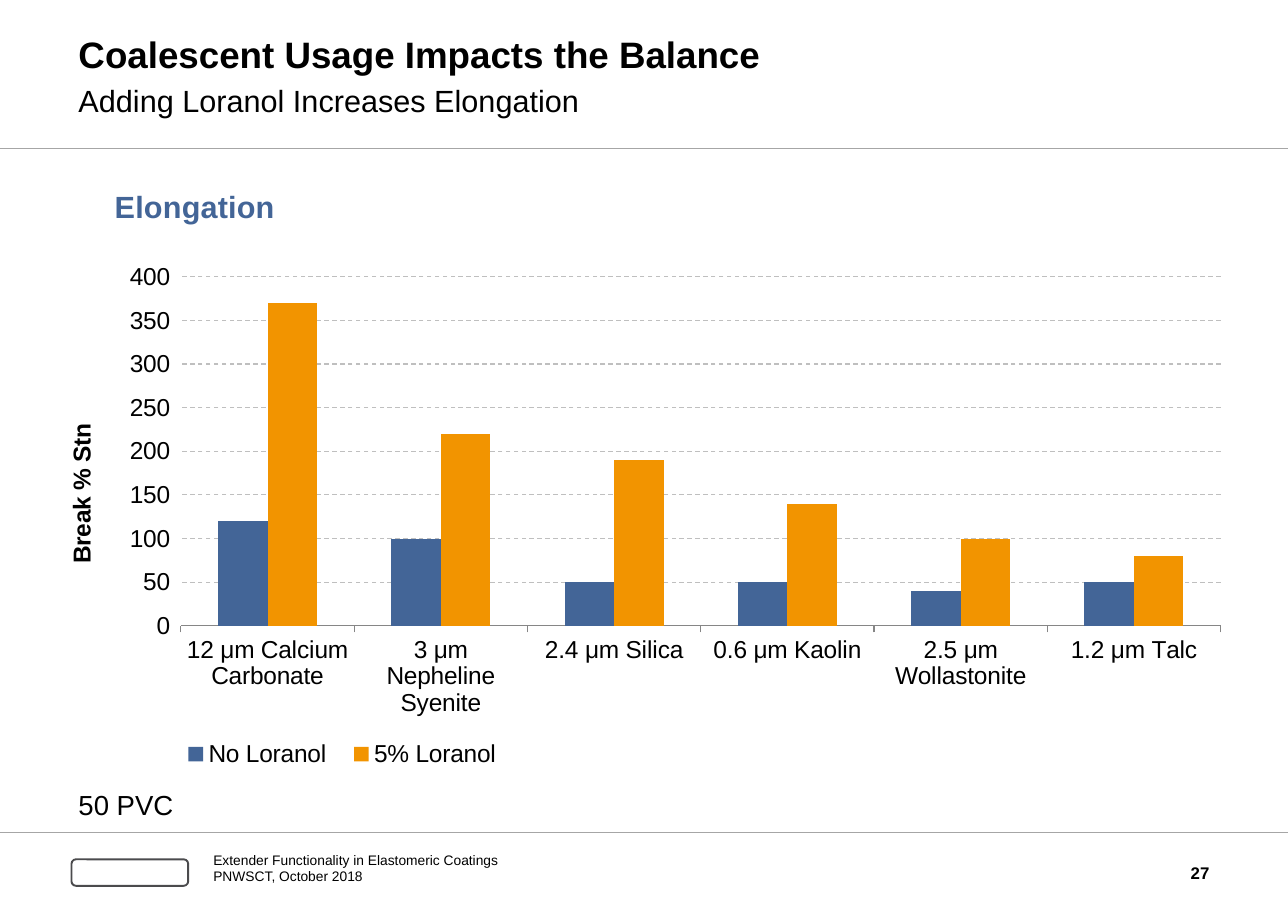
from dataclasses import dataclass

from lxml.etree import SubElement
from pptx import Presentation
from pptx.chart.chart import Chart
from pptx.chart.data import CategoryChartData
from pptx.dml.color import RGBColor
from pptx.enum.chart import XL_CHART_TYPE, XL_LEGEND_POSITION, XL_TICK_MARK
from pptx.enum.dml import MSO_LINE
from pptx.enum.shapes import MSO_CONNECTOR, MSO_SHAPE
from pptx.enum.text import MSO_ANCHOR, MSO_AUTO_SIZE, PP_ALIGN
from pptx.oxml import parse_xml
from pptx.oxml.ns import nsdecls, qn
from pptx.slide import Slide
from pptx.text.text import Font, TextFrame
from pptx.util import Cm, Pt


@dataclass(frozen=True)
class Theme:
    font: str = "Arial"
    text: str = "000000"
    blue: str = "436597"
    orange: str = "F29400"
    white: str = "FFFFFF"
    logo: str = "4B4B4D"
    rule: str = "A6A6A6"
    grid: str = "BFBFBF"
    axis: str = "868686"
    title: int = 24
    subtitle: int = 20
    note: int = 18
    chart: int = 16
    number: int = 11
    footer: int = 9


@dataclass(frozen=True)
class Box:
    left: float
    top: float
    width: float
    height: float

    def lengths(self) -> tuple[Cm, Cm, Cm, Cm]:
        return Cm(self.left), Cm(self.top), Cm(self.width), Cm(self.height)


@dataclass(frozen=True)
class Label:
    box: Box
    lines: tuple[str, ...]
    size: int
    bold: bool = False
    align: PP_ALIGN = PP_ALIGN.LEFT
    spacing: float | None = None


@dataclass(frozen=True)
class Rule:
    top: float
    width: float


@dataclass(frozen=True)
class Series:
    name: str
    values: tuple[int, ...]
    color: str


THEME = Theme()
PAGE_WIDTH, PAGE_HEIGHT = 29.7, 21.0
TITLE_BOX = Box(1.81, 0.53, 26.09, 2.21)
CHART_BOX = Box(1.14, 4.2, 27.56, 13.64)
LOGO_BOX = Box(1.65, 19.81, 2.69, 0.61)
RULES = (Rule(3.43, 0.75), Rule(19.19, 0.5))
LABELS = (
    Label(Box(4.92, 19.63, 12.47, 0.79),
          ("Extender Functionality in Elastomeric Coatings", "PNWSCT, October 2018"),
          THEME.footer, spacing=10.4),
    Label(Box(25.63, 19.53, 2.26, 1.19), ("27",), THEME.number, True, PP_ALIGN.RIGHT),
    Label(Box(1.81, 18.15, 26.21, 0.81), ("50 PVC",), THEME.note),
)
FILLERS = ("12 μm Calcium Carbonate", "3 μm Nepheline Syenite", "2.4 μm Silica",
           "0.6 μm Kaolin", "2.5 μm Wollastonite", "1.2 μm Talc")
SERIES = (
    Series("No Loranol", (120, 100, 50, 50, 40, 50), THEME.blue),
    Series("5% Loranol", (370, 220, 190, 140, 100, 80), THEME.orange),
)


def rgb(color: str) -> RGBColor:
    return RGBColor.from_string(color)


def set_font(font: Font, size: int, bold: bool = False, color: str = THEME.text) -> None:
    font.name, font.size, font.bold = THEME.font, Pt(size), bold
    font.color.rgb = rgb(color)


def add_text(p, text: str, *, size: int, bold: bool = False, color: str = THEME.text) -> None:
    r = p.add_run()
    r.text = text
    set_font(r.font, size, bold, color)


def prepare_frame(tf: TextFrame, anchor: MSO_ANCHOR) -> None:
    tf.margin_left = tf.margin_top = tf.margin_right = tf.margin_bottom = 0
    tf.word_wrap = True
    tf.auto_size = MSO_AUTO_SIZE.NONE
    tf.vertical_anchor = anchor


def add_title(s: Slide) -> None:
    sp = s.shapes.title
    sp.left, sp.top, sp.width, sp.height = TITLE_BOX.lengths()
    prepare_frame(sp.text_frame, MSO_ANCHOR.BOTTOM)
    p = sp.text_frame.paragraphs[0]
    p.alignment, p.line_spacing = PP_ALIGN.LEFT, Pt(28)
    add_text(p, "Coalescent Usage Impacts the Balance", size=THEME.title, bold=True)
    p.add_line_break()
    add_text(p, "Adding Loranol Increases Elongation", size=THEME.subtitle)


def add_label(s: Slide, label: Label) -> None:
    tf = s.shapes.add_textbox(*label.box.lengths()).text_frame
    prepare_frame(tf, MSO_ANCHOR.MIDDLE)
    for i, line in enumerate(label.lines):
        p = tf.add_paragraph() if i else tf.paragraphs[0]
        p.alignment = label.align
        if label.spacing:
            p.line_spacing = Pt(label.spacing)
        add_text(p, line, size=label.size, bold=label.bold)


def add_rule(s: Slide, rule: Rule) -> None:
    line = s.shapes.add_connector(
        MSO_CONNECTOR.STRAIGHT, 0, Cm(rule.top), Cm(PAGE_WIDTH), Cm(rule.top))
    line.line.color.rgb = rgb(THEME.rule)
    line.line.width = Pt(rule.width)
    SubElement(line._element.spPr, qn("a:effectLst"))


def add_logo_frame(s: Slide) -> None:
    sp = s.shapes.add_shape(MSO_SHAPE.ROUNDED_RECTANGLE, *LOGO_BOX.lengths())
    sp.shadow.inherit = False
    sp.fill.solid()
    sp.fill.fore_color.rgb = rgb(THEME.white)
    sp.line.color.rgb = rgb(THEME.logo)
    sp.line.width = Pt(1.25)


def place(element, index: int, **fractions: float) -> None:
    for old in element.findall(qn("c:layout")):
        element.remove(old)
    target = '<c:layoutTarget val="inner"/>' if index == 0 else ""
    modes = "".join(f'<c:{k}Mode val="edge"/>' for k in "xy")
    sizes = "".join(f'<c:{k} val="{v}"/>' for k, v in fractions.items())
    element.insert(index, parse_xml(
        f'<c:layout {nsdecls("c")}><c:manualLayout>{target}{modes}{sizes}'
        "</c:manualLayout></c:layout>"))


def format_axes(chart: Chart) -> None:
    axis = chart.value_axis
    axis.minimum_scale, axis.maximum_scale, axis.major_unit = 0, 400, 50
    axis.tick_labels.number_format = "0"
    axis.tick_labels.number_format_is_linked = False
    axis.major_tick_mark = XL_TICK_MARK.OUTSIDE
    axis.format.line.fill.background()
    grid = axis.major_gridlines.format.line
    grid.color.rgb, grid.width = rgb(THEME.grid), Pt(0.75)
    grid.dash_style = MSO_LINE.DASH
    tf = axis.axis_title.text_frame
    add_text(tf.paragraphs[0], "Break % Stn", size=THEME.chart, bold=True)
    tf._txBody.bodyPr.set("rot", "-5400000")
    tf._txBody.bodyPr.set("vert", "horz")
    place(axis.axis_title._element, 1, x=0.01, y=0.4)
    fillers = chart.category_axis
    fillers.major_tick_mark = XL_TICK_MARK.OUTSIDE
    fillers.format.line.color.rgb = rgb(THEME.axis)
    fillers.format.line.width = Pt(0.75)


def add_elongation_chart(s: Slide) -> None:
    data = CategoryChartData(number_format="0")
    data.categories = FILLERS
    for series in SERIES:
        data.add_series(series.name, series.values)
    chart = s.shapes.add_chart(
        XL_CHART_TYPE.COLUMN_CLUSTERED, *CHART_BOX.lengths(), data).chart
    set_font(chart.font, THEME.chart)
    chart.has_title = True
    add_text(chart.chart_title.text_frame.paragraphs[0], "Elongation",
             size=THEME.subtitle, bold=True, color=THEME.blue)
    place(chart.chart_title._element, 1, x=0.05, y=0)
    chart.has_legend = True
    chart.legend.position = XL_LEGEND_POSITION.BOTTOM
    chart.legend.include_in_layout = False
    place(chart.legend._element, 1, x=0.1, y=0.94, w=0.29, h=0.06)
    plot = chart.plots[0]
    plot.gap_width, plot.overlap, plot.vary_by_categories = 150, 0, False
    for bars, series in zip(plot.series, SERIES):
        bars.format.fill.solid()
        bars.format.fill.fore_color.rgb = rgb(series.color)
    format_axes(chart)
    place(chart._chartSpace.chart.plotArea, 0, x=0.11, y=0.16, w=0.87, h=0.59)


def main() -> None:
    prs = Presentation()
    prs.slide_width, prs.slide_height = Cm(PAGE_WIDTH), Cm(PAGE_HEIGHT)
    s = prs.slides.add_slide(prs.slide_layouts[5])
    for rule in RULES:
        add_rule(s, rule)
    add_logo_frame(s)
    add_title(s)
    add_elongation_chart(s)
    for label in LABELS:
        add_label(s, label)
    prs.save("out.pptx")


if __name__ == "__main__":
    main()
